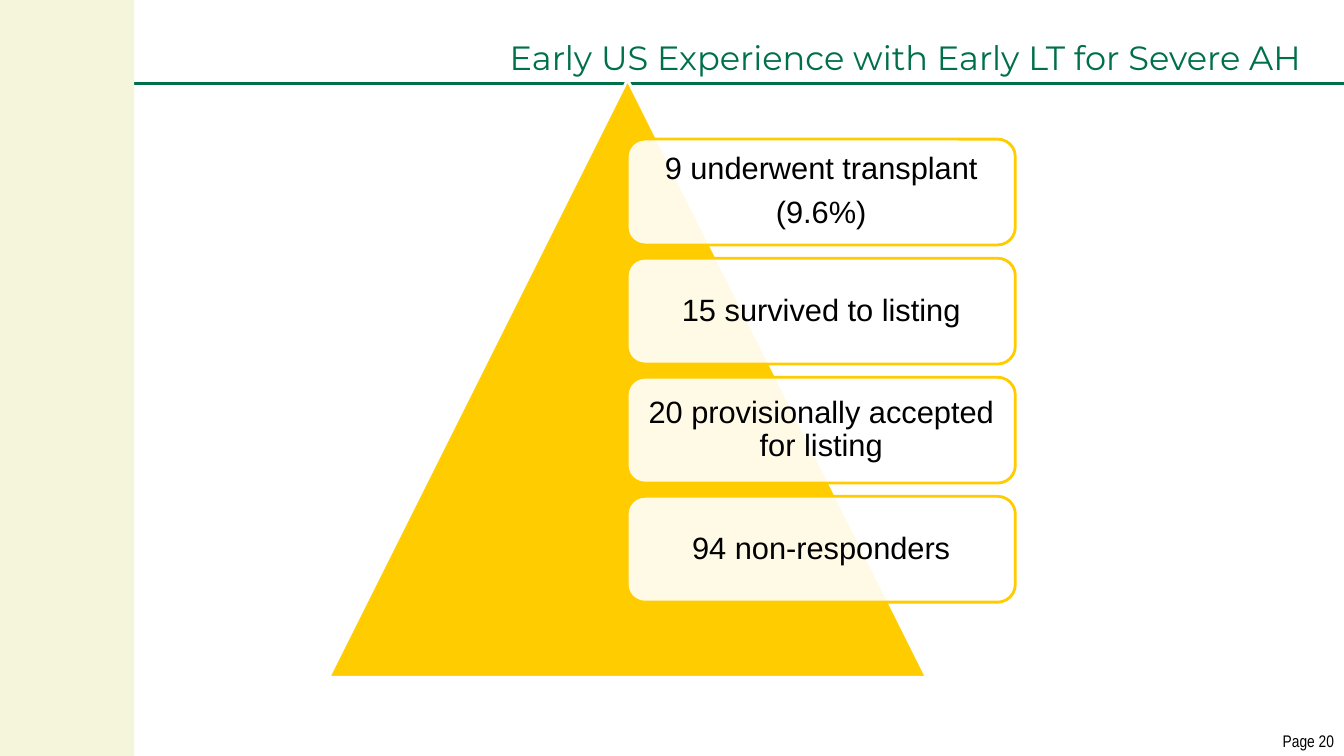
from lxml.etree import SubElement
from pptx import Presentation
from pptx.dml.color import RGBColor
from pptx.enum.shapes import MSO_CONNECTOR, MSO_SHAPE
from pptx.enum.text import MSO_ANCHOR, MSO_AUTO_SIZE, PP_ALIGN
from pptx.oxml.ns import qn
from pptx.util import Emu, Pt

EMU_PER_PX = 9144
SLIDE_WIDTH, SLIDE_HEIGHT = 1333, 750
GREEN, GOLD, BEIGE, WHITE, BLACK = "00704A", "FFCC00", "F5F5DC", "FFFFFF", "000000"

STAGE_LEFT, STAGE_TOP, STAGE_WIDTH, STAGE_HEIGHT = 622, 138, 385, 105
STAGE_GAP = STAGE_HEIGHT / 8
STAGES = [
    ["9 underwent transplant", "(9.6%)"],
    ["15 survived to listing"],
    ["20 provisionally accepted for listing"],
    ["94 non-responders"],
]


def px(value):
    return Emu(round(value * EMU_PER_PX))


def color(hex_value):
    return RGBColor.from_string(hex_value)


def set_values(target, values):
    for name, value in values.items():
        setattr(target, name, value)


def write_text(shape, lines, font, size, hex_value, frame_format, para_format):
    frame = shape.text_frame
    set_values(frame, frame_format)
    for index, line in enumerate(lines):
        para = frame.paragraphs[0] if index == 0 else frame.add_paragraph()
        set_values(para, para_format)
        span = para.add_run()
        span.text = line
        set_values(span.font, {"name": font, "size": Pt(size)})
        span.font.color.rgb = color(hex_value)


def add_box(page, kind, bounds, fill, line=None, opacity=100):
    box = page.shapes.add_shape(kind, *map(px, bounds))
    box.shadow.inherit = False
    box.fill.solid()
    box.fill.fore_color.rgb = color(fill)
    if opacity < 100:
        fill_color = box.fill._xPr.find(qn("a:solidFill"))[0]
        SubElement(fill_color, qn("a:alpha"), val=str(opacity * 1000))
    if line:
        box.line.color.rgb = color(line)
        box.line.width = Pt(2)
    else:
        box.line.fill.background()
    return box


def add_rule(page, top):
    rule = page.shapes.add_connector(
        MSO_CONNECTOR.STRAIGHT, px(0), px(top), px(SLIDE_WIDTH), px(top))
    rule.line.color.rgb = color(GREEN)
    rule.line.width = Pt(2.25)
    SubElement(rule._element.spPr, qn("a:effectLst"))


def add_page_label(page, text):
    label = page.shapes.add_textbox(px(1260), px(720), px(73), px(30))
    write_text(label, [text], "Arial Narrow", 12, BLACK,
               {"word_wrap": False, "auto_size": MSO_AUTO_SIZE.SHAPE_TO_FIT_TEXT},
               {"alignment": PP_ALIGN.RIGHT})


def add_title(page, text):
    title = page.shapes.title
    set_values(title, {"left": px(233), "top": px(0), "width": px(1067), "height": px(82)})
    write_text(title, [text], "Montserrat", 24, GREEN,
               {"vertical_anchor": MSO_ANCHOR.BOTTOM, "word_wrap": True,
                "auto_size": MSO_AUTO_SIZE.NONE},
               {"alignment": PP_ALIGN.RIGHT, "line_spacing": 0.9})


def add_stage(page, index, lines):
    top = STAGE_TOP + index * (STAGE_HEIGHT + STAGE_GAP)
    box = add_box(page, MSO_SHAPE.ROUNDED_RECTANGLE,
                  (STAGE_LEFT, top, STAGE_WIDTH, STAGE_HEIGHT), WHITE, GOLD, 90)
    margins = {f"margin_{side}": px(9) for side in ("left", "right", "top", "bottom")}
    write_text(box, lines, "Arial", 22, BLACK,
               {"vertical_anchor": MSO_ANCHOR.MIDDLE, "word_wrap": True, **margins},
               {"alignment": PP_ALIGN.CENTER, "line_spacing": 0.9, "space_after": Pt(7.7)})


def main():
    deck = Presentation()
    set_values(deck, {"slide_width": px(SLIDE_WIDTH), "slide_height": px(SLIDE_HEIGHT)})
    page = deck.slides.add_slide(deck.slide_layouts[5])
    add_rule(page, 83)
    add_page_label(page, "Page 20")
    add_box(page, MSO_SHAPE.RECTANGLE, (0, 0, 133, SLIDE_HEIGHT), BEIGE)
    add_title(page, "Early US Experience with Early LT for Severe AH")
    add_box(page, MSO_SHAPE.ISOSCELES_TRIANGLE, (326, 79, 593, 593), GOLD, WHITE)
    for index, lines in enumerate(STAGES):
        add_stage(page, index, lines)
    deck.save("out.pptx")


if __name__ == "__main__":
    main()
